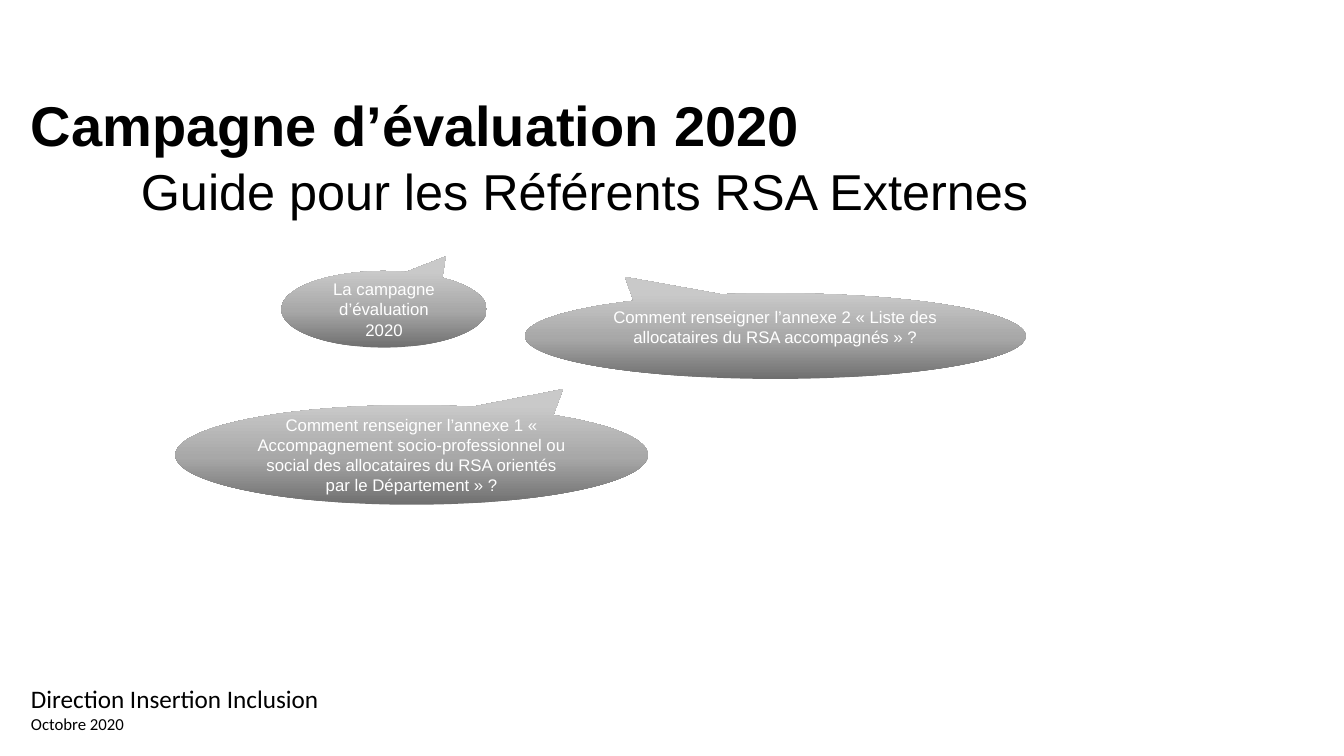
from copy import deepcopy
from dataclasses import dataclass

from pptx import Presentation
from pptx.dml.color import RGBColor
from pptx.enum import shapes, text
from pptx.oxml.ns import qn
from pptx.util import Cm, Pt


@dataclass(frozen=True)
class Theme:
    ink: str = "000000"
    light: str = "FFFFFF"
    shades: tuple = ((0, "6F6F6F"), (0.48, "A8A8A8"), (1, "C9C9C9"))
    head: str = "Arial"
    body: str = "Calibri"
    title: int = 40
    guide: int = 36
    unit: int = 18
    small: int = 12


THEME = Theme()


def style(para, size, face, color, bold=False):
    font = para.font
    font.size, font.name, font.bold = Pt(size), face, bold
    font.color.rgb = RGBColor.from_string(color)


def add_text(slide, area, lines, face, bold=False, space=1.0, top=0.13):
    """Add a text box; lines holds (wording, size) pairs."""
    frame = slide.shapes.add_textbox(*map(Cm, area)).text_frame
    frame.word_wrap = True
    frame.margin_top = Cm(top)
    for num, (words, size) in enumerate(lines):
        para = frame.add_paragraph() if num else frame.paragraphs[0]
        para.text = words
        para.line_spacing = space
        style(para, size, face, THEME.ink, bold)


def shade(shape):
    """Fill from dark at the bottom to light at the top."""
    fill = shape.fill
    fill.gradient()
    fill.gradient_angle = 90
    stops = next(shape.element.iter(qn("a:gsLst")))
    stops.append(deepcopy(stops[-1]))
    for stop, (place, color) in zip(fill.gradient_stops, THEME.shades):
        stop.position = place
        stop.color.rgb = RGBColor.from_string(color)


def add_bubble(slide, area, tip, words, base=0.13):
    """Add a speech bubble; tip is the tail end relative to the centre."""
    kind = shapes.MSO_SHAPE.OVAL_CALLOUT
    bubble = slide.shapes.add_shape(kind, *map(Cm, area))
    bubble.shadow.inherit = False
    bubble.adjustments[0], bubble.adjustments[1] = tip
    shade(bubble)
    bubble.line.fill.background()
    frame = bubble.text_frame
    frame.word_wrap = True
    frame.vertical_anchor = text.MSO_ANCHOR.MIDDLE
    frame.margin_bottom = Cm(base)
    para = frame.paragraphs[0]
    para.text = words
    para.alignment = text.PP_ALIGN.CENTER
    style(para, THEME.small, THEME.head, THEME.light)


def main():
    deck = Presentation()
    deck.slide_width, deck.slide_height = Cm(33.87), Cm(19.05)
    slide = deck.slides.add_slide(deck.slide_layouts[6])

    # Headings
    add_text(slide, (3.3, 4.22, 29.34, 1.98),
             [("Guide pour les Référents RSA Externes", THEME.guide)],
             THEME.head, space=0.9, top=0)
    add_text(slide, (0.53, 2.34, 30.4, 2.11),
             [("Campagne d’évaluation 2020", THEME.title)],
             THEME.head, bold=True, space=0.9)

    # Issuer and date
    add_text(slide, (0.53, 17.09, 9.25, 1.55),
             [("Direction Insertion Inclusion", THEME.unit),
              ("Octobre 2020", THEME.small)], THEME.body)

    # Questions covered by the guide
    add_bubble(slide, (7.09, 6.83, 5.18, 1.93), (0.3, -0.69),
               "La campagne d’évaluation 2020")
    add_bubble(slide, (13.23, 7.39, 12.62, 2.16), (-0.3, -0.69),
               "Comment renseigner l’annexe 2 « Liste des allocataires "
               "du RSA accompagnés » ?", base=0.6)
    add_bubble(slide, (4.42, 10.21, 11.91, 2.51), (0.32, -0.66),
               "Comment renseigner l’annexe 1 « Accompagnement "
               "socio-professionnel ou social des allocataires du RSA "
               "orientés par le Département » ?")

    deck.save("out.pptx")


if __name__ == "__main__":
    main()
